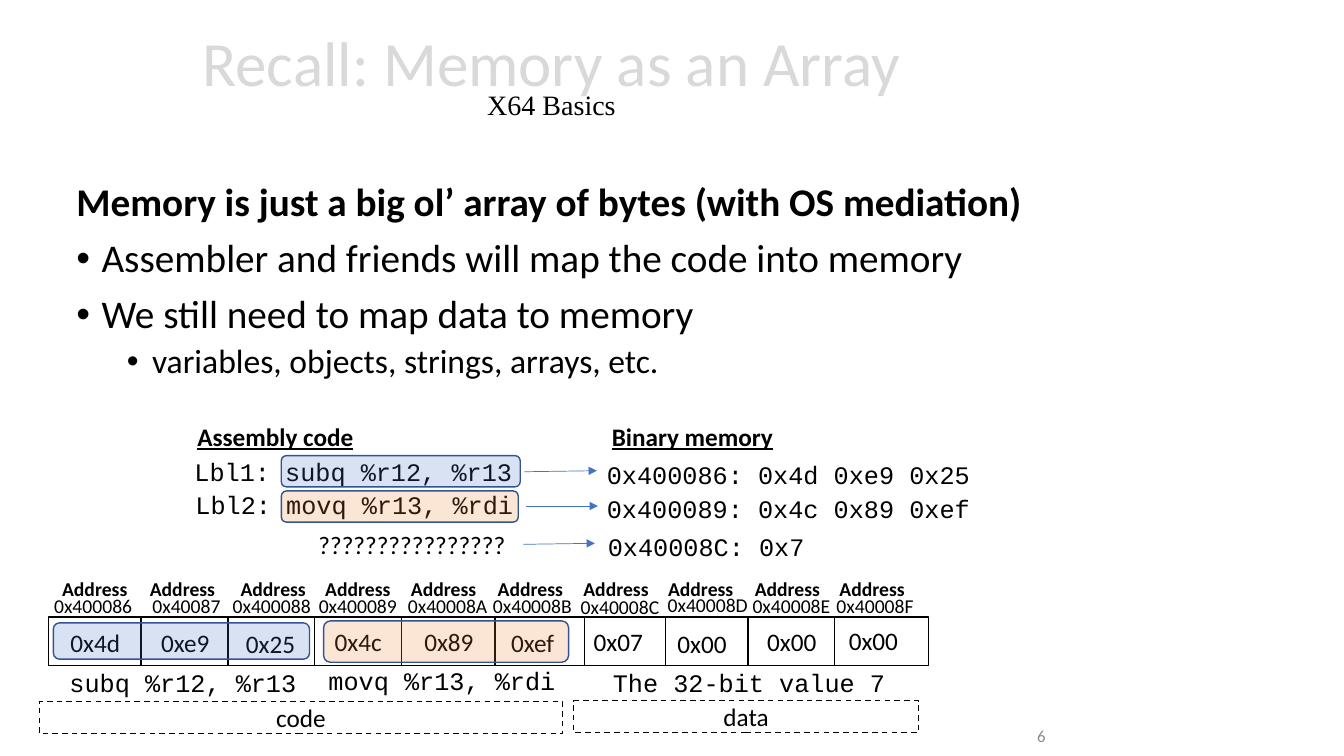
"""Build the slide that shows memory as an array of bytes."""
from dataclasses import dataclass

import pptx
import pptx.dml.color
import pptx.enum.dml
import pptx.enum.shapes
import pptx.enum.text
import pptx.oxml
import pptx.oxml.ns
import pptx.util
from pptx.util import Inches

RGBColor = pptx.dml.color.RGBColor
ALIGN = pptx.enum.text.PP_ALIGN
ANCHOR = pptx.enum.text.MSO_ANCHOR
SHAPE = pptx.enum.shapes.MSO_SHAPE

BLACK = RGBColor(0x00, 0x00, 0x00)
WHITE = RGBColor(0xFF, 0xFF, 0xFF)
PALE_GREY = RGBColor(0xD9, 0xD9, 0xD9)
MID_GREY = RGBColor(0x8C, 0x8C, 0x8C)
BLUE = RGBColor(0x44, 0x72, 0xC4)
ORANGE = RGBColor(0xED, 0x7D, 0x31)
DARK_BLUE = RGBColor(0x32, 0x54, 0x91)
SANS, MONO, SERIF = "Calibri", "Courier New", "Times New Roman"

CELL_TOP, CELL_WIDTH, CELL_HEIGHT = 6.12, 0.93, 0.48
LABEL_HEIGHT, TEXT_HEIGHT = 0.34, 0.4


@dataclass(frozen=True)
class Style:
    size: float = 18
    font: str = SANS
    color: RGBColor = BLACK
    bold: bool = False
    underline: bool = False


@dataclass(frozen=True)
class MemoryByte:
    cell_left: float
    heading_left: float
    address: str
    address_left: float
    address_top: float
    address_width: float
    value: str
    value_left: float
    value_top: float


@dataclass(frozen=True)
class Caption:
    text: str
    left: float
    top: float
    width: float
    style: Style


@dataclass(frozen=True)
class Block:
    left: float
    top: float
    width: float
    height: float
    color: RGBColor
    text: str = ""


@dataclass(frozen=True)
class Arrow:
    start: tuple[float, float]
    end: tuple[float, float]


@dataclass(frozen=True)
class Point:
    text: str
    size: float = 28
    bold: bool = False
    level: int = 0
    indent: float = 0
    space_before: float = 10


PLAIN, CODE = Style(), Style(font=MONO)
HEADING = Style(bold=True, underline=True)
ADDRESS, ADDRESS_HEADING = Style(14), Style(14, bold=True)

POINTS = [
    Point("Memory is just a big ol’ array of bytes (with OS mediation)", bold=True),
    Point("Assembler and friends will map the code into memory", indent=0.25),
    Point("We still need to map data to memory", indent=0.25),
    Point("variables, objects, strings, arrays, etc.", 24, level=1, indent=0.75, space_before=5),
]

MEMORY = [
    MemoryByte(6.56, 6.56, "0x40008D", 6.59, 5.83, 0.86, "0x00", 6.62, 6.18),
    MemoryByte(7.42, 7.42, "0x40008E", 7.42, 5.84, 0.86, "0x00", 7.51, 6.16),
    MemoryByte(8.28, 8.26, "0x40008F", 8.25, 5.84, 0.86, "0x00", 8.32, 6.15),
    MemoryByte(5.67, 5.72, "0x40008C", 5.71, 5.85, 0.88, "0x07", 5.79, 6.16),
    MemoryByte(4.87, 4.87, "0x40008B", 4.84, 5.84, 0.88, "0xef", 4.97, 6.17),
    MemoryByte(0.48, 0.55, "0x400086", 0.46, 5.84, 0.93, "0x4d", 0.6, 6.17),
    MemoryByte(1.4, 1.42, "0x40087", 1.46, 5.84, 0.78, "0xe9", 1.5, 6.17),
    MemoryByte(2.26, 2.32, "0x400088", 2.29, 5.84, 0.81, "0x25", 2.34, 6.18),
    MemoryByte(3.12, 3.16, "0x400089", 3.1, 5.84, 0.9, "0x4c", 3.22, 6.16),
    MemoryByte(3.98, 4.01, "0x40008A", 4, 5.84, 0.88, "0x89", 4.11, 6.16),
]

CAPTIONS = [
    Caption("The 32-bit value 7", 5.98, 6.57, 2.92, CODE),
    Caption("subq %r12, %r13", 0.59, 6.57, 2.46, CODE),
    Caption("movq %r13, %rdi", 3.16, 6.55, 2.46, CODE),
    Caption("Assembly code", 1.86, 4.13, 1.76, HEADING),
    Caption("Binary memory", 5.97, 4.13, 1.81, HEADING),
    Caption("Lbl1: subq %r12, %r13", 1.83, 4.48, 3.37, CODE),
    Caption("0x400086: 0x4d 0xe9 0x25", 5.92, 4.51, 3.82, CODE),
    Caption("Lbl2: movq %r13, %rdi", 1.84, 4.81, 3.37, CODE),
    Caption("0x400089: 0x4c 0x89 0xef", 5.92, 4.84, 3.82, CODE),
    Caption("????????????????", 3.06, 5.2, 2.08, PLAIN),
    Caption("0x40008C: 0x7", 5.93, 5.22, 2.16, CODE),
]

SECTIONS = [
    Block(5.69, 6.95, 3.42, 0.32, WHITE, "data"),
    Block(0.39, 6.96, 5.19, 0.32, WHITE, "code"),
]
HIGHLIGHTS = [
    Block(2.79, 4.87, 2.35, 0.31, ORANGE),
    Block(2.79, 4.52, 2.37, 0.31, BLUE),
    Block(0.53, 6.18, 2.54, 0.36, BLUE),
    Block(3.21, 6.16, 2.43, 0.41, ORANGE),
]
ARROWS = [
    Arrow((5.2, 4.68), (5.92, 4.67)),
    Arrow((5.22, 5.02), (5.93, 5.02)),
    Arrow((5.19, 5.4), (5.9, 5.39)),
]


def add_span(para, text: str, style: Style) -> None:
    span = para.add_run()
    span.text = text
    span.font.size = pptx.util.Pt(style.size)
    span.font.name = style.font
    span.font.color.rgb = style.color
    span.font.bold = style.bold
    span.font.underline = style.underline


def add_text(page, left: float, top: float, width: float, height: float, text: str,
             style: Style, align=ALIGN.LEFT, wrap: bool = False, side_inset: float = 0.1):
    box = page.shapes.add_textbox(Inches(left), Inches(top), Inches(width), Inches(height))
    frame = box.text_frame
    frame.word_wrap = wrap
    frame.auto_size = pptx.enum.text.MSO_AUTO_SIZE.SHAPE_TO_FIT_TEXT
    frame.margin_left = frame.margin_right = Inches(side_inset)
    frame.paragraphs[0].alignment = align
    add_span(frame.paragraphs[0], text, style)
    return box


def add_block(page, block: Block, preset=SHAPE.RECTANGLE, line_color: RGBColor = BLACK):
    box = page.shapes.add_shape(preset, Inches(block.left), Inches(block.top),
                                Inches(block.width), Inches(block.height))
    box.shadow.inherit = False
    box.fill.solid()
    box.fill.fore_color.rgb = block.color
    box.line.color.rgb = line_color
    box.line.width = pptx.util.Pt(1)
    if block.text:
        box.text_frame.vertical_anchor = ANCHOR.MIDDLE
        para = box.text_frame.paragraphs[0]
        para.alignment = ALIGN.CENTER
        add_span(para, block.text, PLAIN)
    return box


def add_highlight(page, block: Block) -> None:
    box = add_block(page, block, SHAPE.ROUNDED_RECTANGLE, DARK_BLUE)
    color = box.fill._xPr.find(".//" + pptx.oxml.ns.qn("a:srgbClr"))
    color.append(pptx.oxml.parse_xml(f'<a:alpha {pptx.oxml.ns.nsdecls("a")} val="20000"/>'))


def add_arrow(page, arrow: Arrow) -> None:
    line = page.shapes.add_connector(pptx.enum.shapes.MSO_CONNECTOR.STRAIGHT,
                                     *map(Inches, arrow.start + arrow.end))
    line.line.color.rgb = BLUE
    line.line.width = pptx.util.Pt(0.5)
    names = pptx.oxml.ns.nsdecls("a")
    line.line._get_or_add_ln().append(pptx.oxml.parse_xml(f'<a:tailEnd {names} type="triangle"/>'))
    line._element.spPr.append(pptx.oxml.parse_xml(f"<a:effectLst {names}/>"))


def add_title(page) -> None:
    title = page.shapes.title
    title.left, title.top, title.width, title.height = map(Inches, (1.16, 0.09, 8.62, 1.45))
    title.text_frame.auto_size = pptx.enum.text.MSO_AUTO_SIZE.NONE
    title.text_frame.vertical_anchor = ANCHOR.MIDDLE
    para = title.text_frame.paragraphs[0]
    para.alignment = ALIGN.CENTER
    para.line_spacing = 0.7
    add_span(para, "Recall: Memory as an Array", Style(45, color=PALE_GREY))
    para.add_line_break()
    add_span(para, "X64 Basics", Style(20, SERIF))


def add_points(page) -> None:
    box = page.shapes.add_textbox(*map(Inches, (0.66, 1.76, 9.67, 2.26)))
    frame = box.text_frame
    frame.word_wrap = True
    for index, point in enumerate(POINTS):
        para = frame.add_paragraph() if index else frame.paragraphs[0]
        para.level = point.level
        para.line_spacing = 0.9
        para.space_before = pptx.util.Pt(point.space_before)
        add_span(para, point.text, Style(point.size, bold=point.bold))
        if point.indent:
            names = pptx.oxml.ns.nsdecls("a")
            settings = para._p.get_or_add_pPr()
            settings.set("marL", str(Inches(point.indent)))
            settings.set("indent", str(Inches(-0.25)))
            settings.append(pptx.oxml.parse_xml(f'<a:buFont {names} typeface="Arial"/>'))
            settings.append(pptx.oxml.parse_xml(f'<a:buChar {names} char="•"/>'))


def add_memory(page) -> None:
    for byte in MEMORY:
        add_block(page, Block(byte.cell_left, CELL_TOP, CELL_WIDTH, CELL_HEIGHT, WHITE))
    for byte in MEMORY:
        add_text(page, byte.heading_left, 5.67, 0.78, LABEL_HEIGHT, "Address",
                 ADDRESS_HEADING, ALIGN.CENTER, True, 0)
        add_text(page, byte.address_left, byte.address_top, byte.address_width, LABEL_HEIGHT,
                 byte.address, ADDRESS, ALIGN.CENTER, True, 0)
        add_text(page, byte.value_left, byte.value_top, 0.69, TEXT_HEIGHT, byte.value, PLAIN)


def main() -> None:
    deck = pptx.Presentation()
    deck.slide_width, deck.slide_height = Inches(13.33), Inches(7.5)
    page = deck.slides.add_slide(deck.slide_layouts.get_by_name("Title Only"))
    add_title(page)
    number = add_text(page, 8.22, 7.1, 2.25, 0.4, "6", Style(12, color=MID_GREY), ALIGN.RIGHT, True)
    number.text_frame.auto_size = pptx.enum.text.MSO_AUTO_SIZE.NONE
    number.text_frame.vertical_anchor = ANCHOR.MIDDLE
    add_points(page)
    add_memory(page)
    for section in SECTIONS:
        add_block(page, section).line.dash_style = pptx.enum.dml.MSO_LINE.DASH
    for caption in CAPTIONS:
        add_text(page, caption.left, caption.top, caption.width, TEXT_HEIGHT, caption.text, caption.style)
    for highlight in HIGHLIGHTS:
        add_highlight(page, highlight)
    for arrow in ARROWS:
        add_arrow(page, arrow)
    deck.save("out.pptx")


if __name__ == "__main__":
    main()
